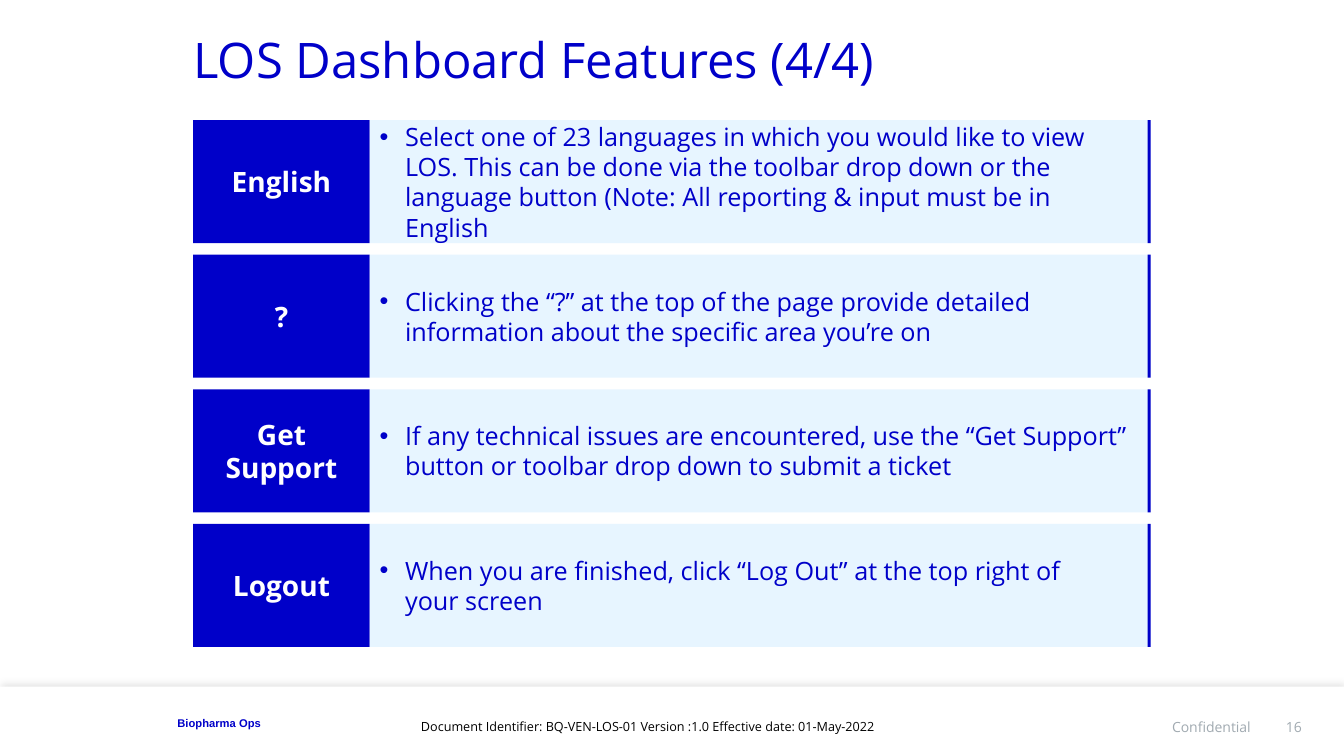
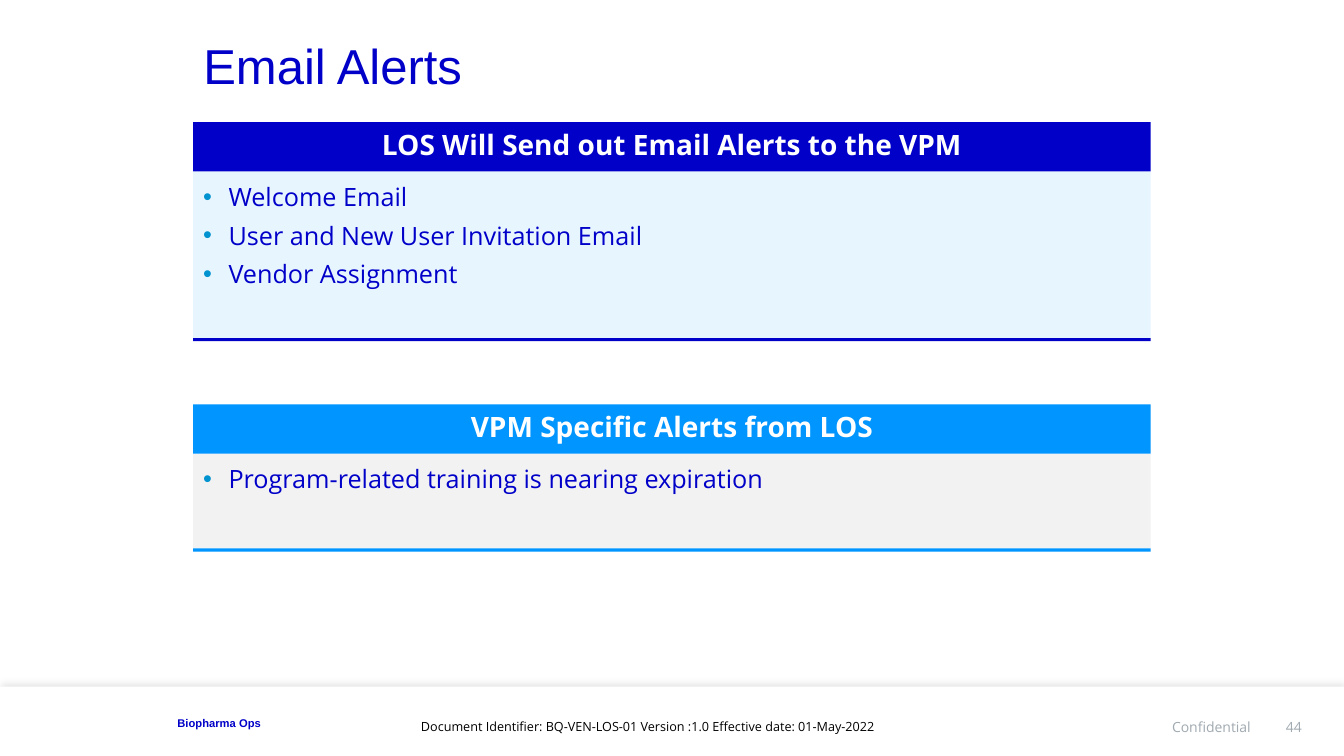
from lxml.etree import SubElement
from pptx import Presentation
from pptx.dml.color import RGBColor
from pptx.enum.shapes import MSO_SHAPE as Preset
from pptx.enum.text import MSO_ANCHOR as Anchor, MSO_AUTO_SIZE as AutoSize, PP_ALIGN as Align
from pptx.oxml.ns import qn
from pptx.util import Cm, Pt

COLORS = {
    "navy": "0000C9",
    "azure": "0095FF",
    "teal": "0093CF",
    "pale": "E7F5FF",
    "light gray": "F2F2F2",
    "gray": "A1AAB1",
    "white": "FFFFFF",
    "black": "000000",
}
SLIDE_WIDTH, SLIDE_HEIGHT = 33.87, 19.05
LEFT, WIDTH = 4.87, 24.13
LABEL_WIDTH, ROW_HEIGHT, ROW_PITCH = 4.45, 3.1, 3.39
HEADER_HEIGHT, RULE = 1.24, 0.08
CONTENT_TOP = 3.03

FEATURES = [
    ("English", "Select one of 23 languages in which you would like to view LOS. "
     "This can be done via the toolbar drop down or the language button "
     "(Note: All reporting & input must be in English"),
    ("?", "Clicking the “?” at the top of the page provide detailed "
     "information about the specific area you’re on"),
    ("Get Support", "If any technical issues are encountered, use the “Get Support” "
     "button or toolbar drop down to submit a ticket"),
    ("Logout", "When you are finished, click “Log Out” at the top right of\vyour screen"),
]


class Deck:
    """Holds the presentation style and the slide being built."""

    def __init__(self):
        self.presentation = Presentation()
        self.presentation.slide_width = Cm(SLIDE_WIDTH)
        self.presentation.slide_height = Cm(SLIDE_HEIGHT)
        self.slide = None

    def color(self, name):
        return RGBColor.from_string(COLORS[name])

    def style(self, paragraph, size, color, bold=False, font="Open Sans", align=Align.LEFT):
        paragraph.alignment = align
        for run in paragraph.runs:
            run.font.name = font
            run.font.size = Pt(size)
            run.font.bold = bold
            run.font.color.rgb = self.color(color)

    def new_slide(self, title, number, left, top, font="Open Sans"):
        self.slide = self.presentation.slides.add_slide(self.presentation.slide_layouts[5])
        shape = self.slide.shapes.title
        shape.left, shape.top, shape.width, shape.height = Cm(left), Cm(top), Cm(25.3), Cm(3.68)
        frame = shape.text_frame
        frame.text = title
        frame.auto_size = AutoSize.NONE
        frame.vertical_anchor = Anchor.MIDDLE
        frame.paragraphs[0].line_spacing = 0.9
        self.style(frame.paragraphs[0], 35, "navy", font=font)
        self.footer(number)

    def footer(self, number):
        self.shadow_above(self.box(0, 17.3, SLIDE_WIDTH, 1.78, "white"))
        self.footer_text(str(number), 32.05, 17.6, 0.76, 10, "gray", align=Align.RIGHT)
        self.footer_text("Confidential", 16.66, 17.6, 14.86, 10, "gray", align=Align.RIGHT)
        self.footer_text("Biopharma Ops", 4.47, 17.45, 11.5, 8, "navy", bold=True, font="Arial")
        frame = self.slide.shapes.add_textbox(Cm(10.36), Cm(17.98), Cm(12.14), Cm(0.64)).text_frame
        frame.word_wrap = False
        frame.text = "Document Identifier: BQ-VEN-LOS-01 Version :1.0 Effective date: 01-May-2022"
        self.style(frame.paragraphs[0], 9, "black")

    def footer_text(self, text, left, top, width, size, color, **style):
        frame = self.slide.shapes.add_textbox(Cm(left), Cm(top), Cm(width), Cm(0.94)).text_frame
        frame.margin_left = frame.margin_top = frame.margin_right = frame.margin_bottom = 0
        frame.word_wrap = True
        frame.vertical_anchor = Anchor.BOTTOM
        frame.text = text
        frame.paragraphs[0].line_spacing = 0.9
        self.style(frame.paragraphs[0], size, color, **style)

    def box(self, left, top, width, height, fill):
        shape = self.slide.shapes.add_shape(
            Preset.RECTANGLE, Cm(left), Cm(top), Cm(width), Cm(height))
        shape.shadow.inherit = False
        shape.fill.solid()
        shape.fill.fore_color.rgb = self.color(fill)
        shape.line.fill.background()
        return shape

    def shadow_above(self, shape):
        effects = shape._element.spPr.find(qn("a:effectLst"))
        shadow = SubElement(effects, qn("a:outerShdw"), blurRad=str(Pt(4)), dist=str(Pt(3)),
                            dir="16200000", algn="b", rotWithShape="0")
        tint = SubElement(shadow, qn("a:srgbClr"), val=COLORS["black"])
        SubElement(tint, qn("a:alpha"), val="10000")

    def heading(self, text, left, top, width, height, fill, anchor):
        frame = self.box(left, top, width, height, fill).text_frame
        frame.vertical_anchor = anchor
        frame.text = text
        self.style(frame.paragraphs[0], 20, "white", bold=True, align=Align.CENTER)

    def bullets(self, shape, items, bullet_color):
        frame = shape.text_frame
        frame.text = "\n".join(items)
        for index, paragraph in enumerate(frame.paragraphs):
            properties = paragraph._p.get_or_add_pPr()
            properties.set("marL", str(Cm(0.64)))
            properties.set("indent", str(-Cm(0.64)))
            color = SubElement(properties, qn("a:buClr"))
            SubElement(color, qn("a:srgbClr"), val=COLORS[bullet_color])
            SubElement(properties, qn("a:buFont"), typeface="Arial")
            SubElement(properties, qn("a:buChar"), char="•")
            paragraph.space_before = Pt(3 if index else 0)
            paragraph.space_after = Pt(3)
            self.style(paragraph, 18, "navy")

    def feature_row(self, index, label, description):
        top = CONTENT_TOP + index * ROW_PITCH
        self.heading(label, LEFT, top, LABEL_WIDTH, ROW_HEIGHT, "navy", Anchor.MIDDLE)
        body = self.box(LEFT + LABEL_WIDTH, top, WIDTH - LABEL_WIDTH, ROW_HEIGHT, "pale")
        self.bullets(body, [description], "navy")
        self.box(LEFT + WIDTH - RULE, top, RULE, ROW_HEIGHT, "navy")

    def alert_panel(self, title, items, top, body_height, accent, fill):
        body_top = top + HEADER_HEIGHT
        body = self.box(LEFT, body_top, WIDTH, body_height, fill)
        body.text_frame.vertical_anchor = Anchor.TOP
        body.text_frame.margin_top = Cm(0.25)
        self.bullets(body, items, "teal")
        self.heading(title, LEFT, top, WIDTH, HEADER_HEIGHT, accent, Anchor.TOP)
        self.box(LEFT, body_top + body_height, WIDTH, RULE, accent)


def main():
    deck = Deck()

    deck.new_slide("LOS Dashboard Features (4/4)", 16, 4.62, -0.25)
    for index, (label, description) in enumerate(FEATURES):
        deck.feature_row(index, label, description)

    deck.new_slide("Email Alerts", 44, LEFT, -0.1, font="Arial")
    deck.alert_panel(
        "LOS Will Send out Email Alerts to the VPM",
        ["Welcome Email", "User and New User Invitation Email", "Vendor Assignment"],
        3.08, 4.2, "navy", "pale")
    deck.alert_panel(
        "VPM Specific Alerts from LOS",
        ["Program-related training is nearing expiration"],
        10.19, 2.39, "azure", "light gray")

    deck.presentation.save("out.pptx")


if __name__ == "__main__":
    main()
